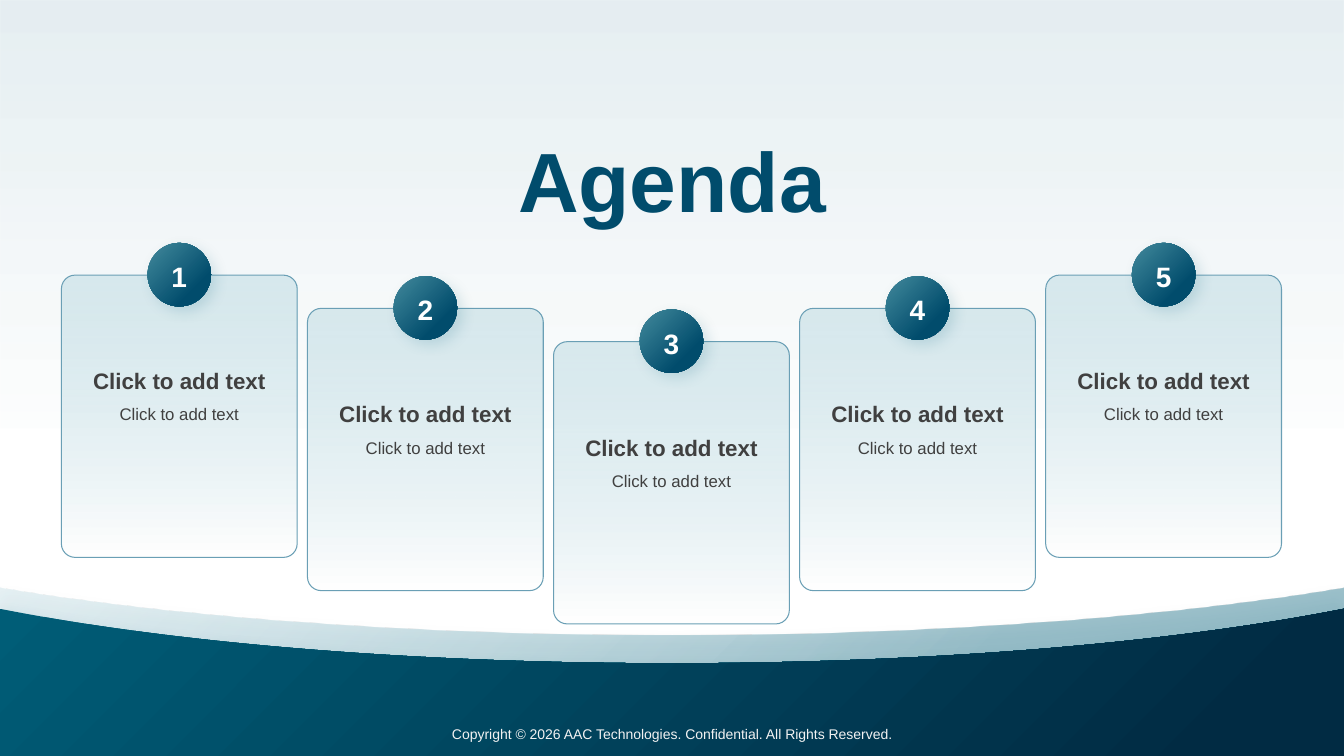
from lxml import etree
from pptx import Presentation
from pptx import util as u
from pptx.dml.color import RGBColor
from pptx.enum import shapes, text
from pptx.oxml.ns import qn

TITLE = "Agenda"
FOOTER = "Copyright © 2026 AAC Technologies. Confidential. All Rights Reserved."
CARDS = [
    ("1", "Click to add text", "Click to add text"),
    ("2", "Click to add text", "Click to add text"),
    ("3", "Click to add text", "Click to add text"),
    ("4", "Click to add text", "Click to add text"),
    ("5", "Click to add text", "Click to add text"),
]
W, H = 13.34, 7.5
MID = W / 2
BACKDROP = [(0, "005D77", 10), (58, "005D77", 0)]
CARD_FILL = [(0, "B4D6DF", 45), (100, "FFFFFF", 100)]
BADGE_FILL = [(0, "438A9C", 100), (74, "014C6C", 100)]
WAVES = [
    (5.83, 6.12, 6.3, 7.09, [(0, "85BCCA", 20), (71, "005D77", 38)]),
    (6.04, 6.38, 6.58, 7.5, [(0, "005D77", 100), (91, "012B43", 100)]),
]
CARD_W, CARD_H, CARD_TOP = 2.34, 2.8, 2.73
FIRST_X, LAST_X, STEP_Y = 0.61, 10.38, 0.33
BADGE = 0.63
TITLE_FMT = {"size": 60, "color": "014C6C", "bold": True}
FOOTER_FMT = {"size": 10, "color": "F2F2F2"}
HEAD_FMT = {"size": 16, "color": "404040", "bold": True}
BODY_FMT = {"size": 12, "color": "404040", "bold": False}
BADGE_FMT = {"size": 20, "color": "FFFFFF", "bold": True}


def rgb(code):
    return RGBColor.from_string(code)


def box(*lengths):
    return [u.Inches(v) for v in lengths]


def paint(sp, stops, angle, line=None):
    sp.shadow.inherit = False
    sp.fill.gradient()
    sp.fill.gradient_angle = 360 - angle
    for stop, (pos, code, alpha) in zip(sp.fill.gradient_stops, stops):
        stop.position = pos / 100
        stop.color.rgb = rgb(code)
    colors = sp._element.spPr.xpath("a:gradFill/a:gsLst/a:gs/a:srgbClr")
    for clr, (pos, code, alpha) in zip(colors, stops):
        etree.SubElement(clr, qn("a:alpha"), val=str(alpha * 1000))
    if line:
        sp.line.color.rgb = rgb(line)
        sp.line.width = u.Pt(0.75)
    else:
        sp.line.fill.background()


def cast_shadow(sp, dist, angle):
    effects = sp._element.spPr.find(qn("a:effectLst"))
    shadow = etree.SubElement(
        effects, qn("a:outerShdw"), blurRad=str(u.Pt(10)), dist=str(u.Pt(dist)),
        dir=str(angle * 60000), algn="ctr", rotWithShape="0")
    clr = etree.SubElement(shadow, qn("a:srgbClr"), val="005D77")
    etree.SubElement(clr, qn("a:alpha"), val="15000")


def write(sp, lines, anchor=text.MSO_ANCHOR.TOP, spacing=1.0, wrap=True):
    tf = sp.text_frame
    tf.word_wrap = wrap
    tf.vertical_anchor = anchor
    for i, (words, fmt) in enumerate(lines):
        p = tf.add_paragraph() if i else tf.paragraphs[0]
        p.alignment = text.PP_ALIGN.CENTER
        p.line_spacing = spacing
        r = p.add_run()
        r.text = words
        r.font.name = "Arial"
        for key, value in fmt.items():
            if key == "color":
                r.font.color.rgb = rgb(value)
            else:
                setattr(r.font, key, u.Pt(value) if key == "size" else value)


def bend(sp, first):
    lines = sp._element.spPr.findall(".//" + qn("a:lnTo"))[first:first + 3]
    curve = etree.Element(qn("a:cubicBezTo"))
    lines[0].addprevious(curve)
    for line in lines:
        curve.append(line[0])
        line.getparent().remove(line)


def add_wave(s, edge, shoulder, dip, bottom, stops):
    left = [(0, edge), (0.05, edge + 0.01), (1.75, shoulder), (4.08, dip)]
    right = [(W - x, y) for x, y in reversed(left)]
    outline = left + [(MID, dip)] + right + [(W, bottom), (0, bottom)]
    points = [box(*point) for point in outline]
    fb = s.shapes.build_freeform(*points[0])
    fb.add_line_segments(points[1:], close=True)
    sp = fb.convert_to_shape()
    for first in (4, 1):
        bend(sp, first)
    paint(sp, stops, 45)
    cast_shadow(sp, 4, 90)


def add_card(s, i, number, head, body):
    last = len(CARDS) - 1
    left = FIRST_X + i * (LAST_X - FIRST_X) / last
    center = left + CARD_W / 2
    top = CARD_TOP + min(i, last - i) * STEP_Y
    group = s.shapes.add_group_shape().shapes
    card = group.add_shape(shapes.MSO_SHAPE.ROUNDED_RECTANGLE,
                           *box(left, top, CARD_W, CARD_H))
    card.adjustments[0] = 0.058
    paint(card, CARD_FILL, 90, "6A9FB5")
    label = group.add_textbox(*box(center - 1.11, top + 0.73, 2.22, 1.47))
    write(label, [(head, HEAD_FMT), (body, BODY_FMT)], spacing=1.5)
    badge = group.add_shape(shapes.MSO_SHAPE.ROUNDED_RECTANGLE,
                            *box(center - BADGE / 2, top - 0.32, BADGE, BADGE))
    badge.adjustments[0] = 0.5
    paint(badge, BADGE_FILL, 45)
    cast_shadow(badge, 5, 45)
    write(badge, [(number, BADGE_FMT)], text.MSO_ANCHOR.MIDDLE, 1.1, False)


def main():
    prs = Presentation()
    prs.slide_width, prs.slide_height = box(W, H)
    s = prs.slides.add_slide(prs.slide_layouts[6])
    backdrop = s.shapes.add_shape(shapes.MSO_SHAPE.RECTANGLE, *box(0, 0, W, H))
    paint(backdrop, BACKDROP, 90)
    for wave in WAVES:
        add_wave(s, *wave)
    write(s.shapes.add_textbox(*box(3.12, 7.15, 7.1, 0.27)), [(FOOTER, FOOTER_FMT)])
    write(s.shapes.add_textbox(*box(0.73, 1.15, 11.88, 1.26)), [(TITLE, TITLE_FMT)],
          text.MSO_ANCHOR.MIDDLE)
    for i, card in enumerate(CARDS):
        add_card(s, i, *card)
    prs.save("out.pptx")


if __name__ == "__main__":
    main()
